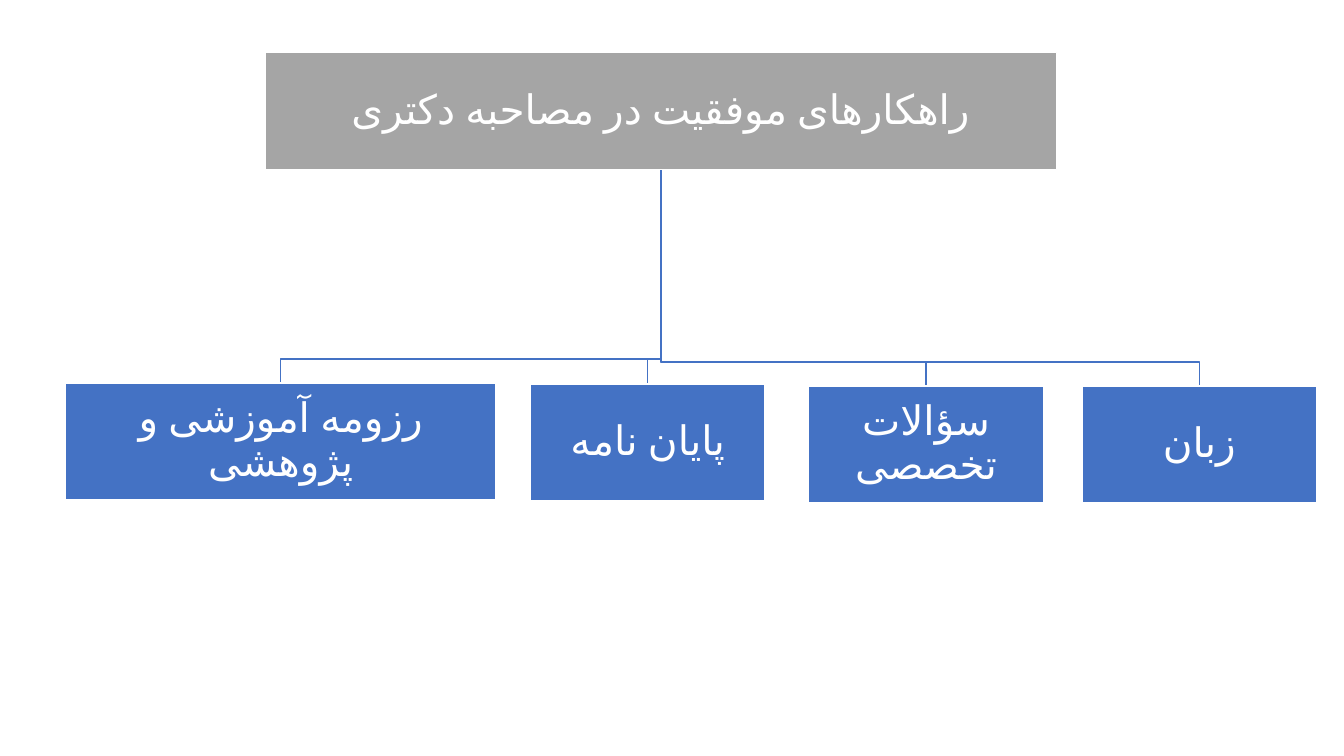
import pptx
import pptx.dml.color
import pptx.enum.shapes
import pptx.enum.text
import pptx.oxml.ns
import pptx.util
from lxml import etree
from pptx.util import Inches

COLORS = {"title": "A5A5A5", "topic": "4472C4", "white": "FFFFFF"}
FONT = "Calibri"
BOX_HEIGHT = 1.16
ELBOW_DROP = 0.24
TITLE = ("راهکارهای موفقیت در مصاحبه دکتری", 2.63, 0.52, 7.85)
TOPICS = [
    ("زبان", 10.73, 3.83, 2.33),
    ("سؤالات تخصصی", 8.02, 3.83, 2.33),
    ("پایان نامه", 5.26, 3.81, 2.33),
    ("رزومه آموزشی و پژوهشی", 0.65, 3.8, 4.27),
]


def color(name):
    return pptx.dml.color.RGBColor.from_string(COLORS[name])


def style_line(shape, name):
    shape.shadow.inherit = False
    shape.line.color.rgb = color(name)
    shape.line.width = pptx.util.Pt(1)


def style_text(paragraph):
    paragraph.alignment = pptx.enum.text.PP_ALIGN.CENTER
    paragraph.line_spacing = 0.9
    paragraph.space_after = pptx.util.Pt(0)
    properties = paragraph._p.get_or_add_pPr()
    properties.set("rtl", "1")
    space_after = properties.find(pptx.oxml.ns.qn("a:spcAft"))
    space_after.clear()
    etree.SubElement(space_after, pptx.oxml.ns.qn("a:spcPct"), val="35000")
    span = paragraph.runs[0]
    span.font.size = pptx.util.Pt(29)
    span.font.name = FONT
    span.font.color.rgb = color("white")
    span._r.get_or_add_rPr().set("lang", "fa-IR")


def add_box(page, text, left, top, width, fill):
    box = page.shapes.add_shape(
        pptx.enum.shapes.MSO_SHAPE.RECTANGLE,
        Inches(left), Inches(top), Inches(width), Inches(BOX_HEIGHT),
    )
    box.fill.solid()
    box.fill.fore_color.rgb = color(fill)
    style_line(box, "white")
    frame = box.text_frame
    frame.word_wrap = True
    frame.vertical_anchor = pptx.enum.text.MSO_ANCHOR.MIDDLE
    frame.margin_left = frame.margin_right = Inches(0.02)
    frame.margin_top = frame.margin_bottom = Inches(0.02)
    frame.text = text
    style_text(frame.paragraphs[0])


def add_branch(page, left, top, width):
    title_left, title_top, title_width = TITLE[1:]
    start_x = Inches(title_left + title_width / 2)
    start_y = Inches(title_top + BOX_HEIGHT)
    end_x = Inches(left + width / 2)
    bend_y = Inches(top - ELBOW_DROP)
    builder = page.shapes.build_freeform(start_x, start_y)
    builder.add_line_segments(
        [(start_x, bend_y), (end_x, bend_y), (end_x, Inches(top))], close=False
    )
    branch = builder.convert_to_shape()
    branch.fill.background()
    style_line(branch, "topic")


def main():
    deck = pptx.Presentation()
    deck.slide_width = Inches(13.33)
    deck.slide_height = Inches(7.5)
    page = deck.slides.add_slide(deck.slide_layouts[6])
    for text, left, top, width in TOPICS:
        add_branch(page, left, top, width)
    add_box(page, *TITLE, "title")
    for topic in reversed(TOPICS):
        add_box(page, *topic, "topic")
    deck.save("out.pptx")


if __name__ == "__main__":
    main()
